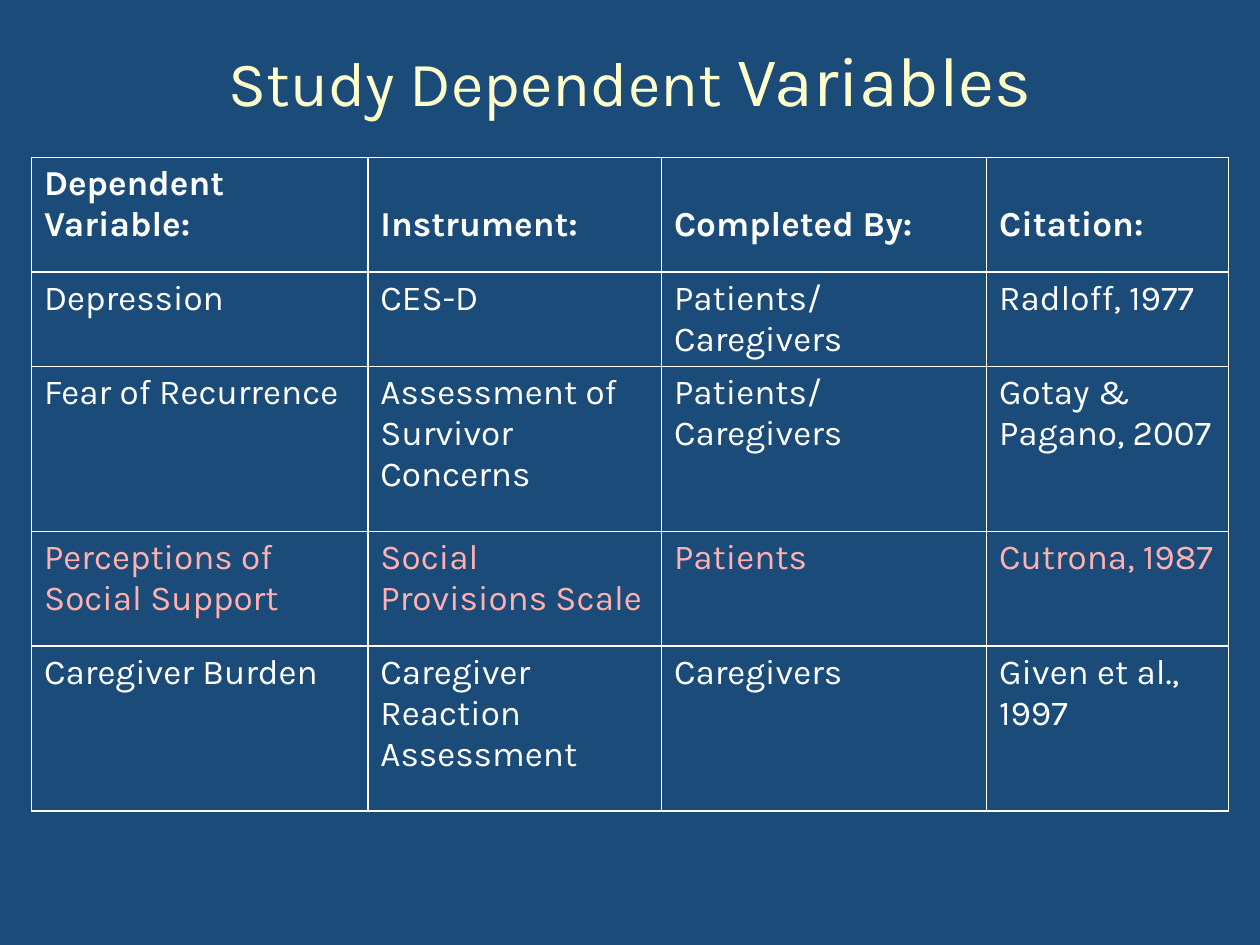
from pptx import Presentation
from pptx.dml.color import RGBColor as Color
from pptx.enum.text import MSO_ANCHOR as Anchor, PP_ALIGN as Align
from pptx.oxml.ns import qn
from pptx.util import Inches, Pt
from lxml.etree import SubElement

THEME = {
    "font": "Karla", "back": "1B4C79", "title": "FFFFCC",
    "text": "FFFFFF", "accent": "FFB0B0", "border": "FFFFFF",
    "title_size": 36, "title_large": 40, "table_size": 20, "border_width": 1,
}
COLUMNS = [2.67, 2.33, 2.58, 1.92]
ROWS = [0.91, 0.64, 1.31, 0.91, 1.31]
TABLE_TOP = 1.25
MARGIN_TOP, MARGIN_BOTTOM = 0.05, 0.03
ONE_LINE = 0.32  # height of a line of table text
VARIABLES = [
    ["Dependent Variable:", "Instrument:", "Completed By:", "Citation:"],
    ["Depression", "CES-D", "Patients/Caregivers", "Radloff, 1977"],
    ["Fear of Recurrence", "Assessment of Survivor Concerns",
     "Patients/Caregivers", "Gotay & Pagano, 2007"],
    ["Perceptions of Social Support", "Social Provisions Scale",
     "Patients", "Cutrona, 1987"],
    ["Caregiver Burden", "Caregiver Reaction Assessment",
     "Caregivers", "Given et al., 1997"],
]
ACCENT_ROW = 3


def add_span(para, text, size, color, bold=False):
    span = para.add_run()
    span.text = text
    span.font.name = THEME["font"]
    span.font.size = Pt(size)
    span.font.bold = bold
    span.font.color.rgb = Color.from_string(color)


def add_borders(cell):
    properties = cell._tc.get_or_add_tcPr()
    for side in ("a:lnL", "a:lnR", "a:lnT", "a:lnB"):
        line = SubElement(properties, qn(side), w=str(Pt(THEME["border_width"])))
        fill = SubElement(line, qn("a:solidFill"))
        SubElement(fill, qn("a:srgbClr"), val=THEME["border"])


# Page
deck = Presentation()
deck.slide_width, deck.slide_height = Inches(10), Inches(7.5)
page = deck.slides.add_slide(deck.slide_layouts[6])
page.background.fill.solid()
page.background.fill.fore_color.rgb = Color.from_string(THEME["back"])

# Title, centred above the table
box = page.shapes.add_textbox(
    deck.slide_width * 5 // 100, 0, deck.slide_width * 9 // 10, Inches(TABLE_TOP))
frame = box.text_frame
frame.word_wrap = True
frame.vertical_anchor = Anchor.MIDDLE
para = frame.paragraphs[0]
para.alignment = Align.CENTER
add_span(para, "Study Dependent ", THEME["title_size"], THEME["title"])
add_span(para, "Variables", THEME["title_large"], THEME["title"])

# Table grid, centred on the page
width = Inches(sum(COLUMNS))
table = page.shapes.add_table(
    len(ROWS), len(COLUMNS), (deck.slide_width - width) // 2, Inches(TABLE_TOP),
    width, Inches(sum(ROWS))).table
table.first_row = table.horz_banding = False
for column, size in zip(table.columns, COLUMNS):
    column.width = Inches(size)
for row, size in zip(table.rows, ROWS):
    row.height = Inches(size)

# Table cells
for r, texts in enumerate(VARIABLES):
    for c, text in enumerate(texts):
        cell = table.cell(r, c)
        add_borders(cell)
        cell.fill.background()
        # One-line headings sit level with the second line of the first heading
        drop = ONE_LINE if r == 0 and c > 0 else 0
        cell.margin_top = Inches(MARGIN_TOP + drop)
        cell.margin_bottom = Inches(MARGIN_BOTTOM)
        color = THEME["accent"] if r == ACCENT_ROW else THEME["text"]
        add_span(cell.text_frame.paragraphs[0], text, THEME["table_size"],
                 color, bold=r == 0)

deck.save("out.pptx")
